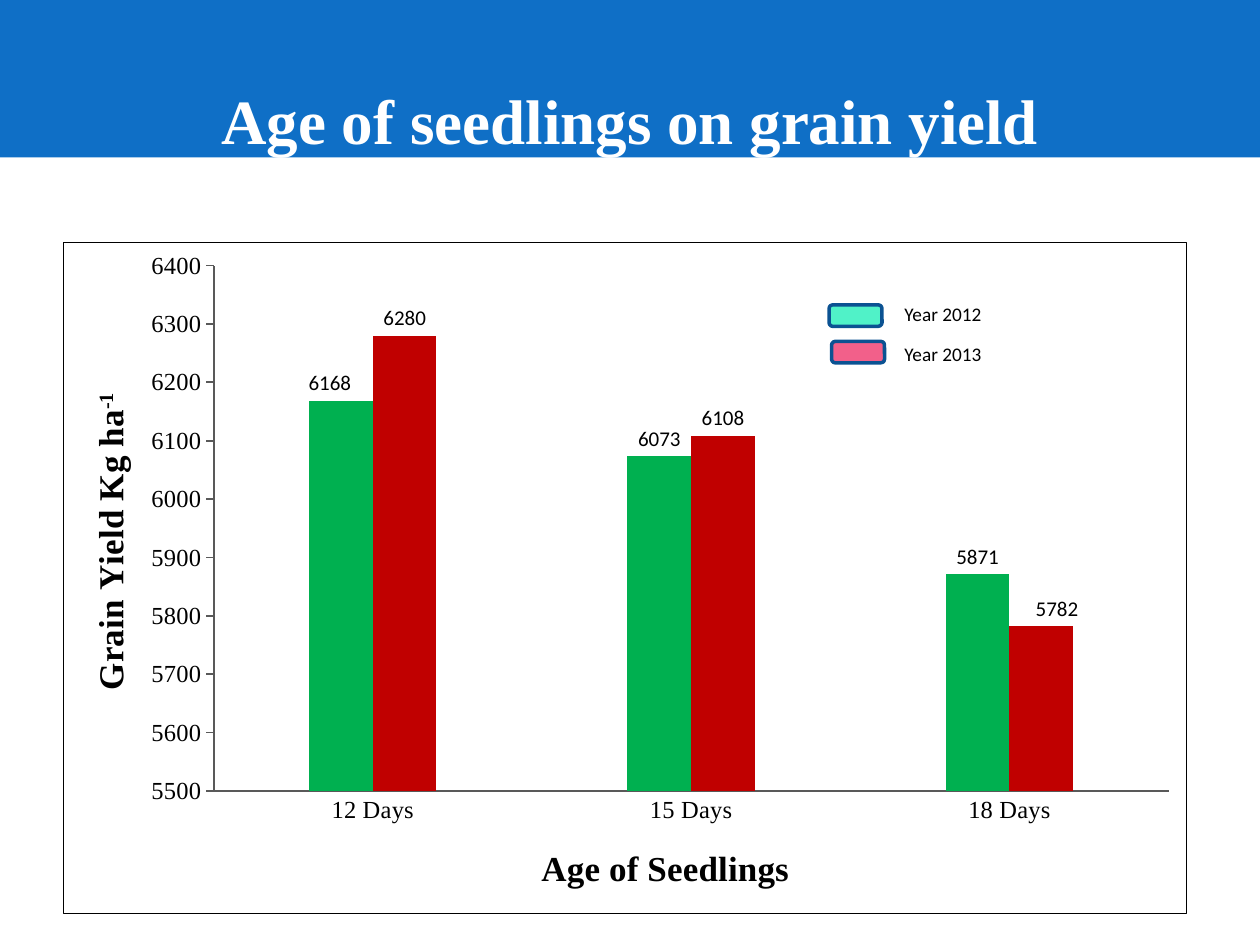
from dataclasses import dataclass

from lxml.etree import SubElement
from pptx import Presentation
from pptx.chart.data import CategoryChartData
from pptx.dml.color import RGBColor
from pptx.enum.chart import XL_CHART_TYPE, XL_LABEL_POSITION, XL_TICK_MARK
from pptx.enum.shapes import MSO_SHAPE
from pptx.enum.text import MSO_ANCHOR, PP_ALIGN
from pptx.oxml import parse_xml
from pptx.oxml.ns import nsdecls, qn
from pptx.util import Inches, Pt


@dataclass(frozen=True)
class Theme:
    banner: str = "0F6FC6"
    white: str = "FFFFFF"
    black: str = "000000"
    axis: str = "595959"
    key_line: str = "0B5292"
    series: tuple = ("00B050", "C00000")
    keys: tuple = ("50F2C8", "F2608A")
    serif: str = "Times New Roman"
    sans: str = "Calibri"
    chart_font: str = "Vollkorn"
    title_size: int = 36
    axis_title_size: int = 20
    tick_size: int = 14
    label_size: int = 12
    key_size: int = 11
    chart_size: int = 10


theme = Theme()


def format_font(font, name, size, color=theme.black, bold=False):
    font.name, font.size, font.bold = name, Pt(size), bold
    font.color.rgb = RGBColor.from_string(color)


def write_text(text_frame, text, superscript="", align=None, **font_format):
    """Write one paragraph, optionally ending in a superscript."""
    paragraph = text_frame.paragraphs[0]
    paragraph.alignment = align
    for part, baseline in ((text, None), (superscript, "30000")):
        if part:
            run = paragraph.add_run()
            run.text = part
            format_font(run.font, **font_format)
            if baseline:
                run._r.get_or_add_rPr().set("baseline", baseline)


presentation = Presentation()
presentation.slide_width, presentation.slide_height = Inches(10), Inches(7.5)
slide = presentation.slides.add_slide(presentation.slide_layouts[5])

# Title banner
title = slide.shapes.title
title.left, title.top = Inches(0), Inches(0)
title.width, title.height = Inches(10), Inches(1.25)
title.fill.solid()
title.fill.fore_color.rgb = RGBColor.from_string(theme.banner)
title_frame = title.text_frame
title_frame.vertical_anchor = MSO_ANCHOR.BOTTOM
title_frame.margin_left = title_frame.margin_right = title_frame.margin_bottom = Inches(0)
write_text(title_frame, "Age of seedlings on grain yield", align=PP_ALIGN.CENTER,
           name=theme.serif, size=theme.title_size, color=theme.white, bold=True)

# Chart
chart_data = CategoryChartData()
chart_data.categories = ["12 Days", "15 Days", "18 Days"]
chart_data.add_series("Series 1", (6168, 6073, 5871))
chart_data.add_series("Series 2", (6280, 6108, 5782))
chart = slide.shapes.add_chart(
    XL_CHART_TYPE.COLUMN_CLUSTERED, Inches(0.5), Inches(1.92), Inches(8.92), Inches(5.33), chart_data
).chart
chart.has_legend = chart.has_title = False
format_font(chart.font, theme.chart_font, theme.chart_size)
chart_space = chart._chartSpace
chart_space.find(qn("c:chart")).addnext(parse_xml(
    f'<c:spPr {nsdecls("c", "a")}><a:noFill/><a:ln w="{Pt(0.25)}"><a:solidFill>'
    f'<a:srgbClr val="{theme.black}"/></a:solidFill></a:ln></c:spPr>'))

# Axes
category_axis, value_axis = chart.category_axis, chart.value_axis
value_axis.minimum_scale, value_axis.maximum_scale, value_axis.major_unit = 5500, 6400, 100
value_axis.has_major_gridlines = False
for axis, text, superscript, tick_mark in (
    (category_axis, "Age of Seedlings", "", XL_TICK_MARK.NONE),
    (value_axis, "Grain Yield Kg ha", "-1", XL_TICK_MARK.OUTSIDE),
):
    axis.major_tick_mark = tick_mark
    axis.format.line.color.rgb = RGBColor.from_string(theme.axis)
    axis.format.line.width = Pt(1)
    format_font(axis.tick_labels.font, theme.serif, theme.tick_size)
    write_text(axis.axis_title.text_frame, text, superscript,
               name=theme.serif, size=theme.axis_title_size, bold=True)
value_body = value_axis.axis_title.text_frame._txBody.find(qn("a:bodyPr"))
value_body.set("rot", "-5400000")
value_body.set("vert", "horz")

# Columns and data labels
plot = chart.plots[0]
plot.gap_width, plot.overlap, plot.vary_by_categories = 300, 0, False
for series, color in zip(plot.series, theme.series):
    series.format.fill.solid()
    series.format.fill.fore_color.rgb = RGBColor.from_string(color)
    labels = series.data_labels
    labels.show_value = True
    labels.position = XL_LABEL_POSITION.OUTSIDE_END
    format_font(labels.font, theme.sans, theme.label_size)

# Manual layouts, as fractions of the chart
layouts = [
    (chart_space.find(".//" + qn("c:plotArea")), 0,
     {"layoutTarget": "inner", "xMode": "edge", "yMode": "edge",
      "x": 0.134, "y": 0.035, "w": 0.85, "h": 0.783}),
    (category_axis.axis_title._element, 1, {"xMode": "edge", "yMode": "edge", "x": 0.42, "y": 0.89}),
    (value_axis.axis_title._element, 1, {"xMode": "edge", "yMode": "edge", "x": 0.02, "y": 0.22}),
]
for series, point_index, shift in ((plot.series[0], 0, -0.01), (plot.series[1], 2, 0.014)):
    label = series.points[point_index].data_label
    label.position = XL_LABEL_POSITION.OUTSIDE_END
    format_font(label.font, theme.sans, theme.label_size)
    point_label = series._element.find(f"{qn('c:dLbls')}/{qn('c:dLbl')}")
    layouts.append((point_label, 1, {"x": shift, "y": 0}))
for parent, position, settings in layouts:
    for old_layout in parent.findall(qn("c:layout")):
        parent.remove(old_layout)
    layout = parse_xml(f'<c:layout {nsdecls("c")}><c:manualLayout/></c:layout>')
    for name, value in settings.items():
        SubElement(layout[0], qn(f"c:{name}")).set("val", str(value))
    parent.insert(position, layout)

# Key
for text, color, key_left, key_top, text_top in (
    ("Year 2012", theme.keys[0], 6.58, 2.42, 2.35),
    ("Year 2013", theme.keys[1], 6.6, 2.71, 2.67),
):
    key = slide.shapes.add_shape(MSO_SHAPE.ROUNDED_RECTANGLE, Inches(key_left), Inches(key_top),
                                 Inches(0.42), Inches(0.17))
    key.shadow.inherit = False
    key.fill.solid()
    key.fill.fore_color.rgb = RGBColor.from_string(color)
    key.line.color.rgb = RGBColor.from_string(theme.key_line)
    key.line.width = Pt(2)
    key_text = slide.shapes.add_textbox(Inches(7.08), Inches(text_top), Inches(0.83), Inches(0.29))
    write_text(key_text.text_frame, text, name=theme.sans, size=theme.key_size)

presentation.save("out.pptx")
